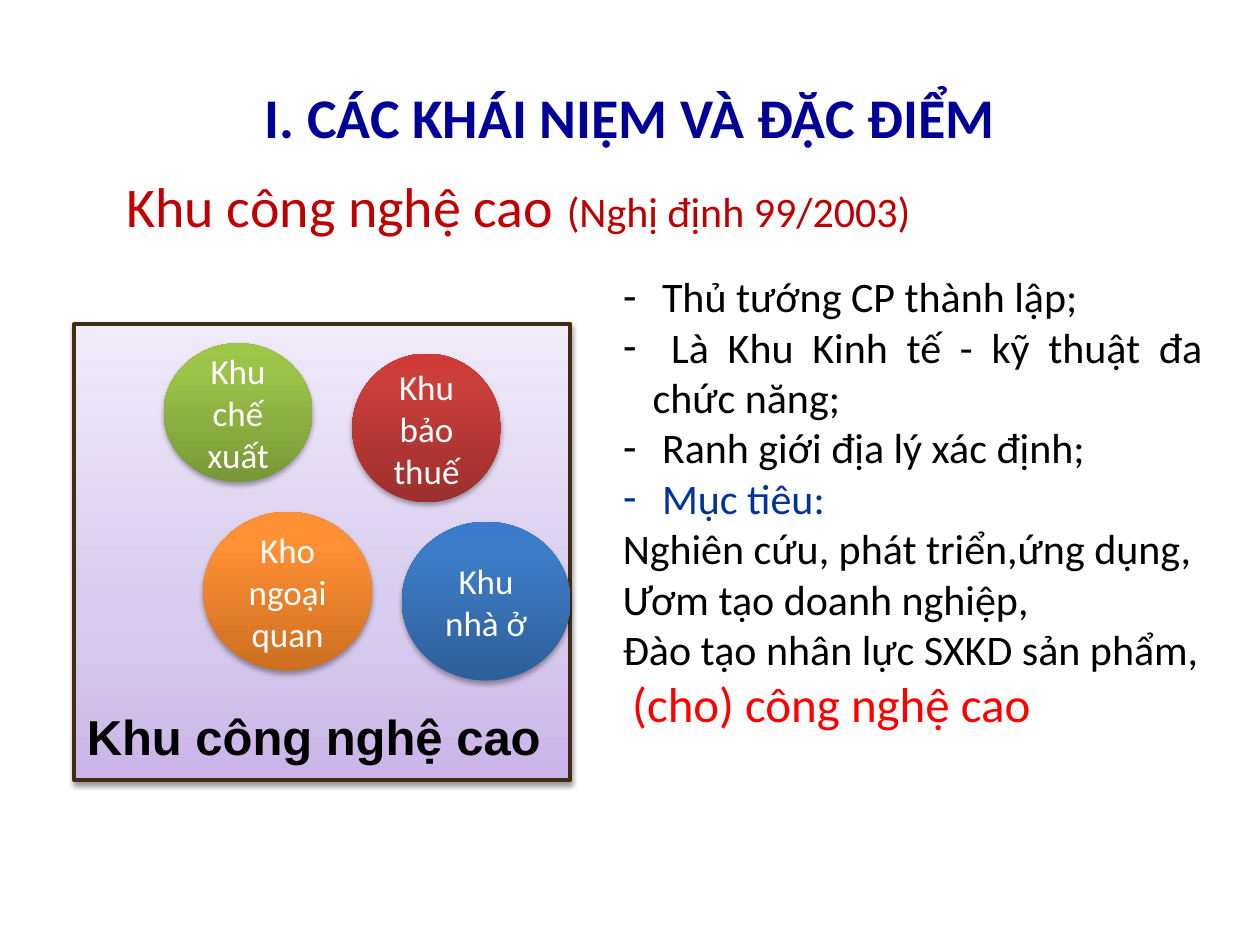
from pptx import Presentation
from pptx.dml.color import RGBColor
from pptx.enum.shapes import MSO_SHAPE
from pptx.enum.text import MSO_ANCHOR, MSO_AUTO_SIZE, PP_ALIGN
from pptx.oxml import parse_xml
from pptx.oxml.ns import nsdecls, qn
from pptx.util import Cm, Pt

RECT, OVAL = MSO_SHAPE.RECTANGLE, MSO_SHAPE.OVAL
MIDDLE, TOP = MSO_ANCHOR.MIDDLE, MSO_ANCHOR.TOP
NO_FIT = MSO_AUTO_SIZE.NONE
LEFT, CENTER, JUSTIFY = PP_ALIGN.LEFT, PP_ALIGN.CENTER, PP_ALIGN.JUSTIFY

NAVY = RGBColor(0x00, 0x00, 0x99)
CRIMSON = RGBColor(0xC0, 0x00, 0x00)
BLUE = RGBColor(0x00, 0x33, 0x99)
RED = RGBColor(0xFF, 0x00, 0x00)
BLACK = RGBColor(0x00, 0x00, 0x00)
WHITE = RGBColor(0xFF, 0xFF, 0xFF)
BROWN = RGBColor(0x42, 0x2C, 0x16)


def shades(*codes):
    return [RGBColor.from_string(code) for code in codes]


LILAC = shades("C9B5E8", "D8CBEE", "F0EAF9")
GREEN = shades("779737", "9BC348", "9DC746")
ORANGE = shades("CC6E20", "FF9034", "FF9136")
BRICK = shades("9C2F2D", "CB3E3A", "CE3B37")
AZURE = shades("2F5F99", "3D7CC7", "3A7CCB")

# Zones inside the park: text, shades, left, top, width, height in cm
ZONES = [
    ("Khu chế xuất", GREEN, 3.3, 6.92, 3, 2.8),
    ("Kho ngoại quan", ORANGE, 4.1, 10.32, 3.4, 3.2),
    ("Khu bảo thuế", BRICK, 7.1, 7.13, 3, 3),
    ("Khu nhà ở", AZURE, 8.1, 10.52, 3.4, 3.2),
]

# List lines: text, colour, bulleted
LINES = [
    (" Thủ tướng CP thành lập;", BLACK, True),
    (" Là Khu Kinh tế - kỹ thuật đa chức năng;", BLACK, True),
    (" Ranh giới địa lý xác định; ", BLACK, True),
    (" Mục tiêu: ", BLUE, True),
    ("Nghiên cứu, phát triển,ứng dụng,", BLACK, False),
    ("Ươm tạo doanh nghiệp,", BLACK, False),
    ("Đào tạo nhân lực SXKD sản phẩm,", BLACK, False),
    (" ", BLACK, False),
]


def write(para, text, size=24, color=BLACK, bold=False, font="Calibri", align=LEFT):
    para.alignment = align
    run = para.add_run()
    run.text = text
    run.font.name = font
    run.font.size = Pt(size)
    run.font.bold = bold
    run.font.color.rgb = color


def place(shape, left, top, width, height):
    shape.left, shape.top = Cm(left), Cm(top)
    shape.width, shape.height = Cm(width), Cm(height)


def set_bullet(para, mark):
    props = para._p.get_or_add_pPr()
    hang = Cm(0.6) if mark else 0
    props.set("marL", str(hang))
    props.set("indent", str(-hang))
    tag = f'<a:buChar {nsdecls("a")} char="-"/>' if mark else f'<a:buNone {nsdecls("a")}/>'
    props.append(parse_xml(tag))


def add_label(slide, box, wrap=True):
    frame = slide.shapes.add_textbox(*map(Cm, box)).text_frame
    frame.word_wrap = wrap
    return frame.paragraphs[0]


def add_panel(slide, kind, box, colors, mid, alpha, dist):
    """Shape with a three-stop upward gradient and a soft shadow below."""
    shape = slide.shapes.add_shape(kind, *map(Cm, box))
    shape.fill.gradient()
    shape.fill.gradient_angle = 90
    props = shape._element.spPr
    stops = props.find(qn("a:gradFill")).find(qn("a:gsLst"))
    for stop in list(stops):
        stops.remove(stop)
    for pos, color in zip((0, mid, 100), colors):
        stops.append(parse_xml(
            f'<a:gs {nsdecls("a")} pos="{pos * 1000}"><a:srgbClr val="{color}"/></a:gs>'))
    shape.line.fill.background()
    props.append(parse_xml(
        f'<a:effectLst {nsdecls("a")}><a:outerShdw blurRad="{Pt(3.1)}" dist="{Pt(dist)}" '
        f'dir="5400000" rotWithShape="0"><a:srgbClr val="000000">'
        f'<a:alpha val="{alpha * 1000}"/></a:srgbClr></a:outerShdw></a:effectLst>'))
    return shape


def add_zone(slide, text, colors, *box):
    shape = add_panel(slide, OVAL, box, colors, 80, 35, 1.8)
    frame = shape.text_frame
    frame.word_wrap = True
    frame.vertical_anchor = MIDDLE
    write(frame.paragraphs[0], text, size=20, color=WHITE, align=CENTER)


def fill_list(body):
    place(body, 12.3, 5.33, 12.2, 9.65)
    frame = body.text_frame
    frame.auto_size = NO_FIT
    frame.vertical_anchor = TOP
    for num, (text, color, mark) in enumerate(LINES):
        para = frame.add_paragraph() if num else frame.paragraphs[0]
        para.space_before = Pt(0)
        set_bullet(para, mark)
        write(para, text, color=color, align=JUSTIFY)
    write(para, "(cho) công nghệ cao", size=28, color=RED, align=JUSTIFY)


def main():
    deck = Presentation()
    deck.slide_width, deck.slide_height = Cm(25.4), Cm(19.05)
    slide = deck.slides.add_slide(deck.slide_layouts[1])
    title, body = slide.placeholders

    # Title and subtitle
    place(title, 1.27, 0.76, 22.86, 3.18)
    title.text_frame.vertical_anchor = MIDDLE
    write(title.text_frame.paragraphs[0], "I. CÁC KHÁI NIỆM VÀ ĐẶC ĐIỂM",
          size=32, color=NAVY, bold=True, align=CENTER)
    para = add_label(slide, (2.3, 3.33, 20.6, 1.63))
    write(para, "Khu công nghệ cao ", size=32, color=CRIMSON)
    write(para, "(Nghị định 99/2003)", color=CRIMSON)

    # Features on the right
    fill_list(body)

    # Park with its zones
    park = add_panel(slide, RECT, (1.5, 6.53, 10, 9.2), LILAC, 35, 38, 1.6)
    park.line.color.rgb = BROWN
    park.line.width = Pt(2.25)
    para = add_label(slide, (1.5, 14.12, 9.78, 1.45), wrap=False)
    write(para, "Khu công nghệ cao", size=28, bold=True, font="Arial")
    for zone in ZONES:
        add_zone(slide, *zone)

    deck.save("out.pptx")


if __name__ == "__main__":
    main()
